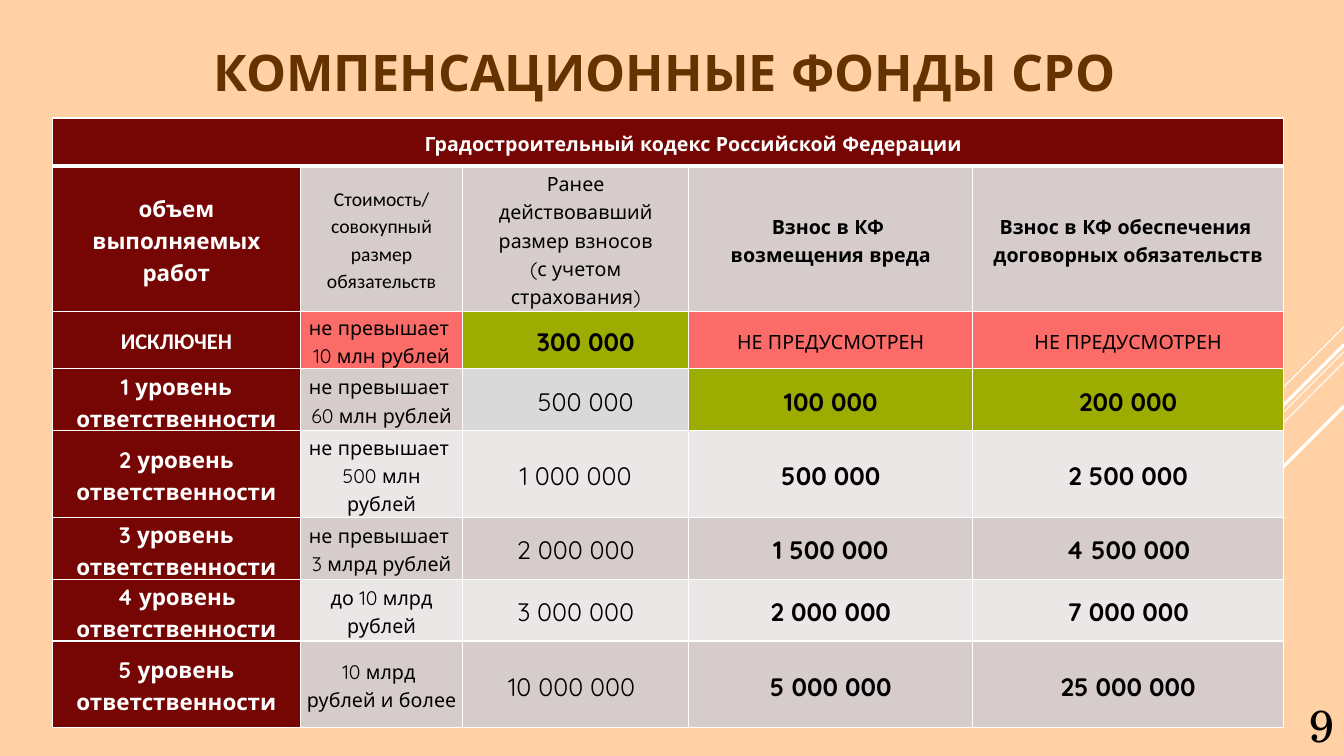
from itertools import product
from pptx import Presentation
from pptx.dml.color import RGBColor as Rgb
from pptx.enum.shapes import MSO_CONNECTOR as Connector
from pptx.enum.text import MSO_ANCHOR as Anchor, MSO_AUTO_SIZE as AutoSize, PP_ALIGN as Align
from pptx.oxml import parse_xml
from pptx.oxml.ns import nsdecls
from pptx.util import Pt

PX = 9144
THEME = {
    "background": "FFD1A4", "title": "663300", "white": "FFFFFF", "black": "000000",
    "maroon": "760603", "dark_band": "D6CCCC", "light_band": "ECE7E7",
    "grey": "D9D9D9", "red": "FB6B67", "green": "9CAC00",
    "title_size": 36, "page_size": 32, "amount_size": 18, "level_size": 16, "text_size": 14,
    "main_font": "Quicksand", "narrow_font": "Calibri", "page_font": "TeX Gyre Schola",
}


def style_text(frame, size, color, font="main_font", bold=False, align=Align.CENTER, spacing=None):
    frame.word_wrap = True
    for paragraph in frame.paragraphs:
        for name, value in {"alignment": align, "line_spacing": spacing}.items():
            setattr(paragraph, name, value)
        for run in paragraph.runs:
            for name, value in {"size": Pt(THEME[size]), "name": THEME[font], "bold": bold}.items():
                setattr(run.font, name, value)
            run.font.color.rgb = Rgb.from_string(THEME[color])


def add_borders(cell, bottom_width):
    properties = cell._tc.get_or_add_tcPr()
    widths = {"lnL": 1, "lnR": 1, "lnT": 1, "lnB": bottom_width}
    for position, (side, width) in enumerate(widths.items()):
        properties.insert(position, parse_xml(
            f'<a:{side} {nsdecls("a")} w="{Pt(width)}"><a:solidFill>'
            f'<a:srgbClr val="{THEME["white"]}"/></a:solidFill></a:{side}>'))


deck = Presentation()
deck.slide_width, deck.slide_height = 1333 * PX, 750 * PX
slide = deck.slides.add_slide(deck.slide_layouts[5])
slide.background.fill.solid()
slide.background.fill.fore_color.rgb = Rgb.from_string(THEME["background"])

rays = [(324, 1233, 424, 0.75), (349, 1007, 675, 0.75), (359, 1126, 567, 0.75),
        (342, 1142, 533, 2.25), (403, 1194, 542, 2.25)]
for top, left, bottom, width in rays:
    ray = slide.shapes.add_connector(Connector.STRAIGHT, 1333 * PX, top * PX, left * PX, bottom * PX)
    ray.line.width = Pt(width)
    ray.line.color.rgb = Rgb.from_string(THEME["white"])
    ray._element.spPr.append(parse_xml(f'<a:effectLst {nsdecls("a")}/>'))

title = slide.shapes.title
for name, value in {"left": 7, "top": 34, "width": 1304, "height": 73}.items():
    setattr(title, name, value * PX)
title.text_frame.text = "КОМПЕНСАЦИОННЫЕ ФОНДЫ СРО"
title.text_frame.auto_size = AutoSize.NONE
title.text_frame.vertical_anchor = Anchor.MIDDLE
style_text(title.text_frame, "title_size", "title", bold=True)

page = slide.shapes.add_textbox(1208 * PX, 677 * PX, 125 * PX, 73 * PX)
page.text_frame.text = "9"
page.text_frame.vertical_anchor = Anchor.BOTTOM
style_text(page.text_frame, "page_size", "black", "page_font", align=Align.RIGHT)

fees = [
    (48, "maroon", ["Градостроительный кодекс Российской Федерации", "", "", "", ""]),
    (144, "dark_band", ["объем выполняемых работ", "Стоимость/\vсовокупный размер обязательств",
                        "Ранее действовавший размер взносов\n(с учетом страхования)",
                        "Взнос в КФ \nвозмещения вреда",
                        "Взнос в КФ обеспечения \nдоговорных обязательств"]),
    (57, "red", ["ИСКЛЮЧЕН", "не превышает \v10 млн рублей", "300 000",
                 "НЕ ПРЕДУСМОТРЕН", "НЕ ПРЕДУСМОТРЕН"]),
    (57, "dark_band", ["1 уровень ответственности", "не превышает \v60 млн рублей",
                       "500 000", "100 000", "200 000"]),
    (86, "light_band", ["2 уровень ответственности", "не превышает \v500 млн рублей",
                        "1 000 000", "500 000", "2 500 000"]),
    (57, "dark_band", ["3 уровень ответственности", "не превышает \v3 млрд рублей",
                       "2 000 000", "1 500 000", "4 500 000"]),
    (57, "light_band", ["4 уровень ответственности", "до 10 млрд рублей",
                        "3 000 000", "2 000 000", "7 000 000"]),
    (86, "dark_band", ["5 уровень ответственности", "10 млрд \nрублей и более",
                       "10 000 000", "5 000 000", "25 000 000"]),
]
column_widths = [246, 161, 224, 282, 308]
special_fills = {(2, 2): "green", (3, 2): "grey", (3, 3): "green", (3, 4): "green"}
narrow_cells = {(1, 1), (2, 0)}
regular_cells = {(1, 2), (2, 3), (2, 4)}
side_margins = {(0, 0): (56, 6), (2, 2): (26, 6), (3, 2): (26, 6), (7, 2): (6, 14)}

table = slide.shapes.add_table(len(fees), len(column_widths), 52 * PX, 117 * PX,
                               sum(column_widths) * PX, 592 * PX).table
table.horz_banding = False
for column, width in zip(table.columns, column_widths):
    column.width = width * PX
for row, (height, _, _) in zip(table.rows, fees):
    row.height = height * PX

for place in product(range(len(fees)), range(len(column_widths))):
    row, column = place
    _, band, texts = fees[row]
    cell = table.cell(row, column)
    left, right = side_margins.get(place, (6, 6))
    layout = {"text": texts[column], "vertical_anchor": Anchor.MIDDLE, "margin_left": left * PX,
              "margin_right": right * PX, "margin_top": 0, "margin_bottom": 0}
    for name, value in layout.items():
        setattr(cell, name, value)
    cell.fill.solid()
    fill = "maroon" if column == 0 else special_fills.get(place, band)
    cell.fill.fore_color.rgb = Rgb.from_string(THEME[fill])
    add_borders(cell, 3 if row == 0 else 1)

    is_amount = row > 1 and column > 1 and texts[column][0].isdigit()
    size = "amount_size" if is_amount else "level_size" if column == 0 and row else "text_size"
    bold = place == (2, 2) or column in (0, 3, 4) and place not in regular_cells
    style_text(cell.text_frame, size, "white" if fill == "maroon" else "black",
               "narrow_font" if place in narrow_cells else "main_font", bold, spacing=1.15)

table.cell(0, 0).merge(table.cell(0, len(column_widths) - 1))
deck.save("out.pptx")
